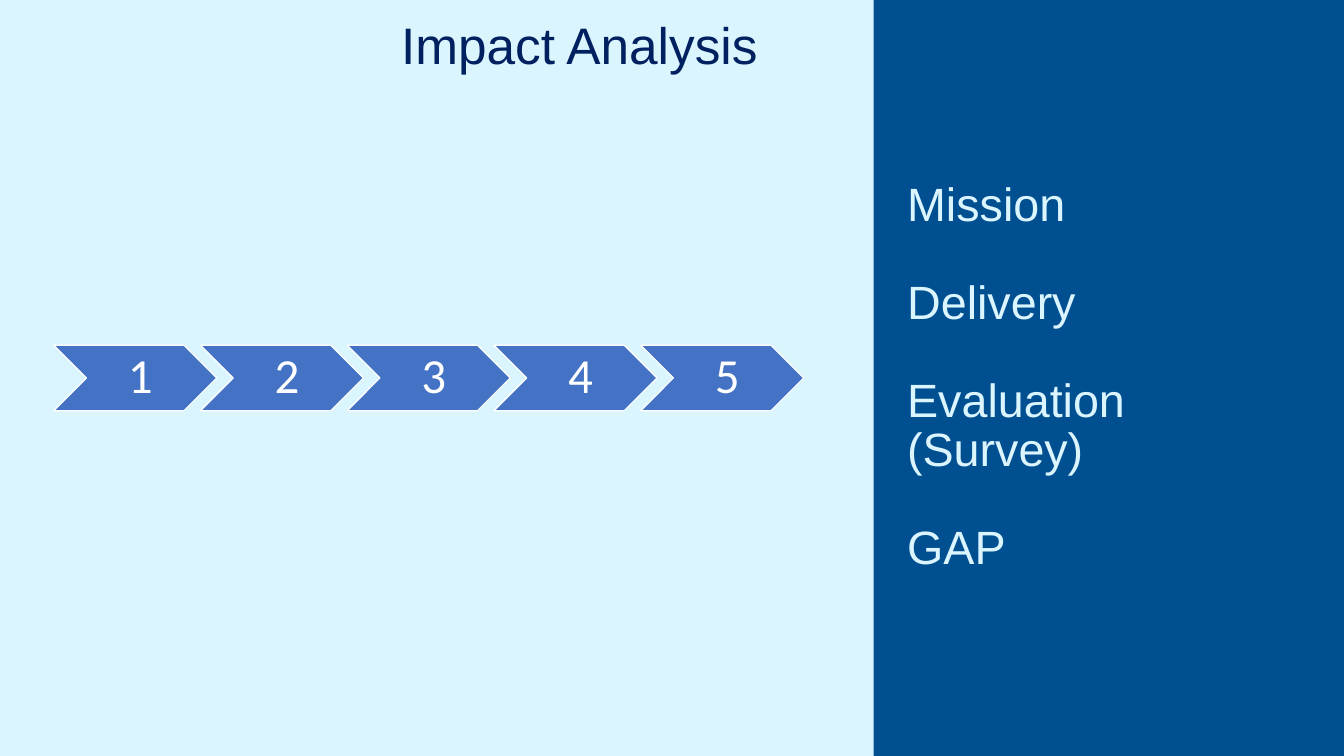
from pptx import Presentation
from pptx.dml.color import RGBColor
from pptx.enum import shapes, text
from pptx.util import Inches, Pt

PALE, NAVY, BLUE, INK, WHITE = "DBF5FF", "004F91", "4472C4", "002060", "FFFFFF"


def rgb(value):
    return RGBColor.from_string(value)


def add_shape(s, kind, box, fill, line=None):
    sp = s.shapes.add_shape(kind, *map(Inches, box))
    sp.shadow.inherit = False
    sp.fill.solid()
    sp.fill.fore_color.rgb = rgb(fill)
    if line:
        sp.line.color.rgb = rgb(line)
        sp.line.width = Pt(1)
    else:
        sp.line.fill.background()
    return sp


def write(sp, lines, size, color, font="Arial", align=text.PP_ALIGN.CENTER,
          anchor=text.MSO_ANCHOR.MIDDLE, spacing=0.9, gap=0,
          insets=(0.1, 0.05, 0.1, 0.05)):
    tf = sp.text_frame
    tf.word_wrap = True
    tf.vertical_anchor = anchor
    tf.margin_left, tf.margin_top, tf.margin_right, tf.margin_bottom = map(Inches, insets)
    for i, line in enumerate(lines):
        p = tf.add_paragraph() if i else tf.paragraphs[0]
        p.alignment = align
        p.line_spacing = spacing
        if i:
            p.space_before = Pt(gap)
        r = p.add_run()
        r.text = line
        r.font.name = font
        r.font.size = Pt(size)
        r.font.color.rgb = rgb(color)


def add_text(s, box, lines, **style):
    write(s.shapes.add_textbox(*map(Inches, box)), lines, **style)


def add_step(s, number):
    left = 0.64 + (number - 1) * 1.747
    sp = add_shape(s, shapes.MSO_SHAPE.CHEVRON, (left, 4.11, 1.94, 0.78), BLUE, WHITE)
    write(sp, [str(number)], size=42, color=WHITE, font="Calibri",
          insets=(0.18, 0.06, 0.06, 0.06))


def main():
    prs = Presentation()
    prs.slide_width, prs.slide_height = Inches(16), Inches(9)
    s = prs.slides.add_slide(prs.slide_layouts[6])
    s.background.fill.solid()
    s.background.fill.fore_color.rgb = rgb(PALE)

    # Side panel with topics
    add_shape(s, shapes.MSO_SHAPE.RECTANGLE, (10.4, 0, 5.6, 9), NAVY)
    add_text(s, (10.4, 0, 4.96, 9), ["Mission", "Delivery", "Evaluation (Survey)", "GAP"],
             size=40, color=PALE, align=text.PP_ALIGN.LEFT, spacing=Pt(42), gap=42,
             insets=(0.4, 0, 0, 0))

    # Process steps
    for number in range(1, 6):
        add_step(s, number)

    # Title
    add_text(s, (0, 0.19, 13.8, 1.4), ["Impact Analysis"], size=44, color=INK,
             anchor=text.MSO_ANCHOR.TOP)

    prs.save("out.pptx")


if __name__ == "__main__":
    main()
